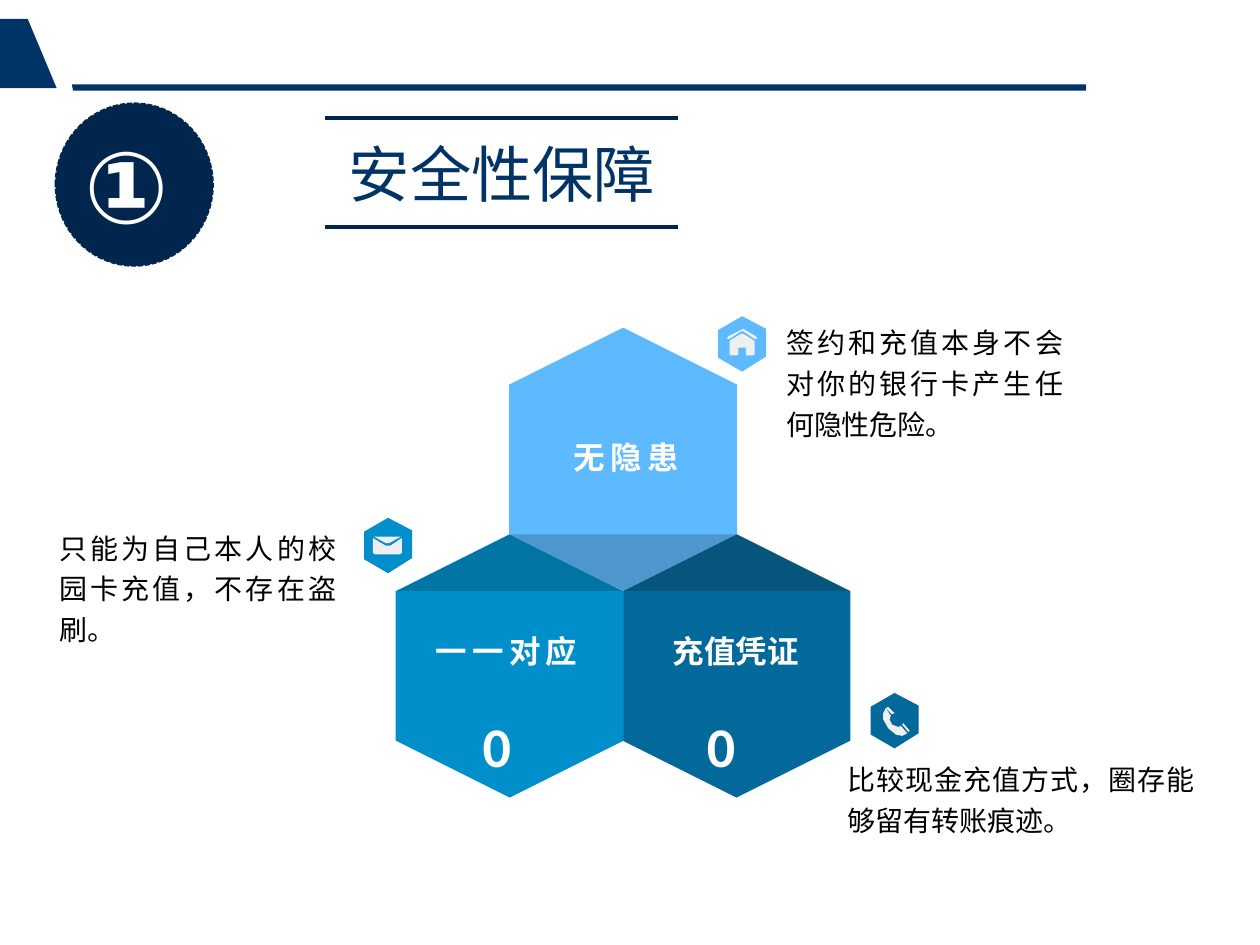
from lxml.etree import SubElement
from pptx import Presentation
from pptx.dml.color import RGBColor
from pptx.enum.dml import MSO_LINE
from pptx.enum.shapes import MSO_CONNECTOR, MSO_SHAPE
from pptx.enum.text import MSO_AUTO_SIZE, PP_ALIGN
from pptx.oxml.ns import qn
from pptx.util import Inches, Pt

NAVY = RGBColor(0x00, 0x33, 0x66)
DARK = RGBColor(0x00, 0x26, 0x4D)
SKY = RGBColor(0x5D, 0xBA, 0xFF)
BLUE = RGBColor(0x00, 0x8F, 0xCA)
TEAL = RGBColor(0x03, 0x68, 0x9A)
PALE = RGBColor(0xF0, 0xEF, 0xEF)
SHADE = RGBColor(0x0D, 0x0D, 0x0D)
WHITE = RGBColor(0xFF, 0xFF, 0xFF)
BLACK = RGBColor(0x00, 0x00, 0x00)
CJK = "Noto Sans CJK SC"
ROBOTO = "Roboto Condensed"

# Icon outlines, as offsets from the top left of the icon's badge
BADGE = [(0, .11), (.19, 0), (.38, .1), (.38, .32), (.19, .44), (0, .33)]
HOUSE = [
    [(.2, .14), (.18, .14), (.1, .19), (.09, .2), (.09, .31), (.15, .31),
     (.16, .3), (.16, .25), (.22, .25), (.22, .31), (.28, .31), (.29, .3),
     (.29, .2), (.28, .19)],
    [(.31, .18), (.29, .18), (.2, .12), (.18, .12), (.09, .18), (.07, .18),
     (.08, .16), (.18, .11), (.2, .1), (.3, .16)],
]
PHONE = [
    [(.24, .26), (.22, .27), (.17, .25), (.15, .21), (.16, .18), (.12, .12),
     (.11, .14), (.1, .16), (.1, .21), (.14, .28), (.2, .33), (.25, .34),
     (.29, .32)],
    [(.31, .3), (.3, .31), (.25, .25), (.26, .24)],
    [(.19, .16), (.17, .17), (.12, .12), (.14, .11)],
]
MAIL = [
    [(.2, .2), (.29, .15), (.08, .15), (.17, .2)],
    [(.21, .22), (.19, .22), (.17, .22), (.07, .16), (.07, .28), (.09, .29),
     (.28, .29), (.3, .28), (.3, .16)],
]


class Deck:
    def __init__(self):
        self.prs = Presentation()
        self.prs.slide_width = Inches(10)
        self.prs.slide_height = Inches(7.5)
        self.slide = self.prs.slides.add_slide(self.prs.slide_layouts[6])
        self.shapes = self.slide.shapes

    def paint(self, shape, color, alpha=None):
        shape.shadow.inherit = False
        shape.fill.solid()
        shape.fill.fore_color.rgb = color
        shape.line.fill.background()
        if alpha is not None:
            tone = shape.fill._xPr.find(".//" + qn("a:srgbClr"))
            SubElement(tone, qn("a:alpha"), val=str(alpha * 1000))
        return shape

    def outline(self, points, color, left=0, top=0, alpha=None):
        spots = [(Inches(left + x), Inches(top + y)) for x, y in points]
        pen = self.shapes.build_freeform(*spots[0], scale=1.0)
        pen.add_line_segments(spots[1:], close=True)
        return self.paint(pen.convert_to_shape(), color, alpha)

    def line(self, left, right, y):
        rule = self.shapes.add_connector(
            MSO_CONNECTOR.STRAIGHT, Inches(left), Inches(y), Inches(right), Inches(y))
        rule.line.color.rgb = DARK
        rule.line.width = Pt(2.25)
        SubElement(rule._element.spPr, qn("a:effectLst"))

    def shape(self, kind, left, top, width, height, color):
        item = self.shapes.add_shape(
            kind, Inches(left), Inches(top), Inches(width), Inches(height))
        return self.paint(item, color)

    def hexagon(self, left, top, color):
        item = self.shape(MSO_SHAPE.HEXAGON, left, top, 2.09, 1.81, color)
        item.adjustments[0] = 0.25
        item.rotation = 270

    def icon(self, left, top, color, parts):
        self.outline(BADGE, color, left, top)
        for part in parts:
            self.outline(part, PALE, left, top)

    def text(self, text, left, top, width, height, size=18, color=WHITE,
             font=CJK, asian=CJK, bold=False, align=PP_ALIGN.LEFT, gap=0,
             pad=(.07, .04), wrap=True, lines=None, after=None):
        """Add a text box; pad is the side and the upright inset, gap the letter spacing."""
        box = self.shapes.add_textbox(
            Inches(left), Inches(top), Inches(width), Inches(height))
        frame = box.text_frame
        frame.word_wrap = wrap
        frame.auto_size = MSO_AUTO_SIZE.SHAPE_TO_FIT_TEXT
        frame.margin_left = frame.margin_right = Inches(pad[0])
        frame.margin_top = frame.margin_bottom = Inches(pad[1])
        para = frame.paragraphs[0]
        para.alignment = align
        if lines:
            para.line_spacing = lines
        if after:
            para.space_after = Pt(after)
        run = para.add_run()
        run.text = text
        run.font.size = Pt(size)
        run.font.bold = bold
        run.font.color.rgb = color
        run.font.name = font
        props = run.font._element
        SubElement(props, qn("a:ea"), typeface=asian)
        if gap:
            props.set("spc", str(gap * 100))
        return frame

    def label(self, text, left, top, gap=0):
        self.text(text, left, top, 1.66, .38, bold=True, gap=gap,
                  align=PP_ALIGN.CENTER)

    def note(self, text, left, top, width, height):
        self.text(text, left, top, width, height, size=16, color=BLACK,
                  align=PP_ALIGN.JUSTIFY, lines=1.21, after=6, pad=(.08, .04))


def main():
    deck = Deck()

    # Header
    deck.outline([(.57, .67), (8.62, .67), (8.62, .72), (.58, .72)], NAVY)
    deck.outline([(.22, .15), (.45, .7), (0, .7), (0, .15)], NAVY)
    deck.text("安全性保障", 2.67, 1.03, 2.75, .99, size=35, color=NAVY,
              font="Arial", pad=(.1, .05))
    for y in (1.8, .94):
        deck.line(2.58, 5.38, y)

    # Icons and their notes
    deck.icon(5.7, 2.51, SKY, HOUSE)
    deck.icon(6.91, 5.5, TEAL, PHONE)
    deck.icon(2.89, 4.11, BLUE, MAIL)
    deck.note("只能为自己本人的校园卡充值，不存在盗刷。", .39, 4.12, 2.36, 1.05)
    deck.note("签约和充值本身不会对你的银行卡产生任何隐性危险。", 6.16, 2.49, 2.36, 1.05)
    deck.note("比较现金充值方式，圈存能够留有转账痕迹。", 6.65, 5.96, 2.91, .73)

    # Hexagons, each with a shaded tip where it meets the others
    for left, top, color, tip, base in (
            (4.8, 4.38, TEAL, 4.24, 4.69),
            (3, 4.38, BLUE, 4.24, 4.69),
            (3.9, 2.74, SKY, 4.69, 4.24)):
        deck.hexagon(left, top, color)
        mid = left + 1.05
        deck.outline([(mid, tip), (mid + .9, base), (mid - .9, base)], SHADE,
                     alpha=20)
    deck.label("无隐患", 4.14, 3.44, gap=3)
    deck.label("一一对应", 3.19, 4.98, gap=3)
    deck.label("充值凭证", 5.01, 4.98)
    for number, left in (("02", 3.76), ("03", 5.54)):
        deck.text(number, left, 5.61, .54, .54, size=32, font="Calibri",
                  bold=True, wrap=False)

    # Section number
    disc = deck.shape(MSO_SHAPE.OVAL, .44, .82, 1.25, 1.29, DARK)
    disc.line.color.rgb = DARK
    disc.line.width = Pt(1)
    disc.line.dash_style = MSO_LINE.SQUARE_DOT
    frame = deck.text("①", .39, .93, 1.95, 1.06, size=57, font=ROBOTO,
                      asian=ROBOTO, bold=True, pad=(.1, .05))
    frame.margin_left = Inches(.28)

    deck.prs.save("out.pptx")


if __name__ == "__main__":
    main()
